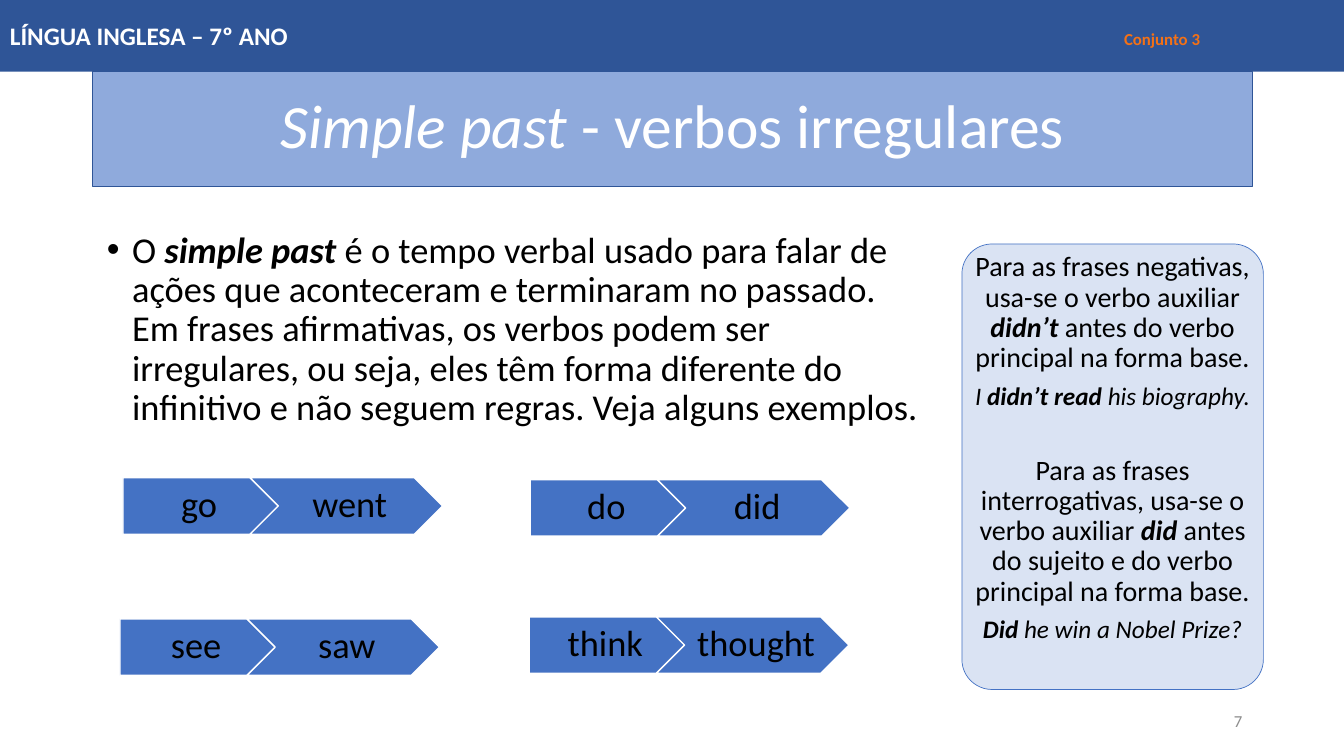
"""Build the slide on irregular verbs in the simple past."""
from lxml import etree
from pptx import Presentation
from pptx.dml.color import RGBColor
from pptx.enum.shapes import MSO_SHAPE
from pptx.enum.text import MSO_ANCHOR, MSO_AUTO_SIZE, PP_ALIGN
from pptx.oxml.ns import qn
from pptx.util import Inches, Pt

LEFT, CENTER, RIGHT = PP_ALIGN.LEFT, PP_ALIGN.CENTER, PP_ALIGN.RIGHT
TOP, MIDDLE = MSO_ANCHOR.TOP, MSO_ANCHOR.MIDDLE
RECTANGLE, ROUNDED = MSO_SHAPE.RECTANGLE, MSO_SHAPE.ROUNDED_RECTANGLE
PENTAGON, CHEVRON = MSO_SHAPE.PENTAGON, MSO_SHAPE.CHEVRON

FONT = "Calibri"
BLACK = RGBColor(0x00, 0x00, 0x00)
WHITE = RGBColor(0xFF, 0xFF, 0xFF)
GRAY = RGBColor(0x8C, 0x8C, 0x8C)
NAVY = RGBColor(0x2F, 0x55, 0x97)
BLUE = RGBColor(0x44, 0x72, 0xC4)
SKY = RGBColor(0x8F, 0xAA, 0xDC)
PALE = RGBColor(0xDA, 0xE3, 0xF3)
ORANGE = RGBColor(0xF4, 0x71, 0x16)

SUBJECT = "LÍNGUA INGLESA – 7º ANO"
UNIT = "Conjunto 3"
UNIT_TAB = 11.05
PAGE_NUMBER = "7"
TITLE = [("Simple past ", "i"), ("- verbos irregulares", "")]
BODY = [
    ("O ", ""),
    ("simple past", "bi"),
    (" é o tempo verbal usado para falar de ações que aconteceram e terminaram "
     "no passado. Em frases afirmativas, os verbos podem ser irregulares, ou seja, "
     "eles têm forma diferente do infinitivo e não seguem regras. "
     "Veja alguns exemplos.", ""),
]
RULES = [
    (20, 0, [("Para as frases negativas, usa-se o verbo auxiliar ", ""),
             ("didn’t", "bi"),
             (" antes do verbo principal na forma base.", "")]),
    (18, 0, [("I ", "i"), ("didn’t read ", "bi"), ("his biography.", "i")]),
    (20, 26, [("Para as frases interrogativas, usa-se o verbo auxiliar ", ""),
              ("did", "bi"),
              (" antes do sujeito e do verbo principal na forma base.", "")]),
    (18, 0, [("Did ", "bi"), ("he win a Nobel Prize?", "i")]),
]
VERBS = [
    ("go", "went", 1.22, 4.74),
    ("do", "did", 5.26, 4.76),
    ("see", "saw", 1.19, 6.14),
    ("think", "thought", 5.25, 6.12),
]
ARROW_HEIGHT = 0.56
BASE_WIDTH, PAST_WIDTH, PAST_OFFSET = 1.54, 1.91, 1.26


def place(box, left, top, width, height):
    """Move and size a box, in inches."""
    box.left, box.top = Inches(left), Inches(top)
    box.width, box.height = Inches(width), Inches(height)


def paint(box, fill, line=None, weight=1):
    """Fill and outline a box."""
    box.fill.solid()
    box.fill.fore_color.rgb = fill
    if line is None:
        box.line.fill.background()
    else:
        box.line.color.rgb = line
        box.line.width = Pt(weight)


def add_box(page, kind, at, fill, line=None, weight=1):
    """Add a painted preset shape without a shadow."""
    box = page.shapes.add_shape(kind, *map(Inches, at))
    box.shadow.inherit = False
    paint(box, fill, line, weight)
    return box


def set_frame(box, anchor=MIDDLE, insets=(0.1, 0.05, 0.1, 0.05)):
    """Set wrapping, anchor and insets, and return the text frame."""
    frame = box.text_frame
    frame.word_wrap = True
    frame.auto_size = MSO_AUTO_SIZE.NONE
    frame.vertical_anchor = anchor
    (frame.margin_left, frame.margin_top,
     frame.margin_right, frame.margin_bottom) = map(Inches, insets)
    return frame


def write(para, spans, size=18, color=BLACK, align=CENTER, spacing=0.9,
          before=0, after=0):
    """Write (text, style) spans into a paragraph with one format."""
    para.alignment = align
    para.line_spacing = spacing
    para.space_before, para.space_after = Pt(before), Pt(after)
    for text, style in spans:
        span = para.add_run()
        span.text = text
        span.font.name = FONT
        span.font.size = Pt(size)
        span.font.color.rgb = color
        span.font.bold = "b" in style
        span.font.italic = "i" in style
    return para


def add_bullet(para, indent):
    """Give a paragraph a round bullet with a hanging indent."""
    properties = para._p.get_or_add_pPr()
    properties.set("marL", str(Inches(indent)))
    properties.set("indent", str(-Inches(indent)))
    etree.SubElement(properties, qn("a:buFont"), typeface="Arial")
    etree.SubElement(properties, qn("a:buChar"), char="•")


def add_tab_stop(para, position):
    """Add a left tab stop, in inches from the text edge."""
    stops = etree.SubElement(para._p.get_or_add_pPr(), qn("a:tabLst"))
    etree.SubElement(stops, qn("a:tab"), pos=str(Inches(position)), algn="l")


def add_header(page):
    """Add the band with the subject and the unit."""
    band = add_box(page, RECTANGLE, (0, 0, 13.33, 0.71), NAVY)
    para = set_frame(band).paragraphs[0]
    write(para, [(SUBJECT + "\t", "b")], color=WHITE, align=LEFT, spacing=1.0)
    write(para, [(UNIT, "b")], size=12, color=ORANGE, align=LEFT, spacing=1.0)
    add_tab_stop(para, UNIT_TAB)


def add_rules(page):
    """Add the panel with the negative and interrogative rules."""
    panel = add_box(page, ROUNDED, (9.54, 2.42, 2.99, 4.42), PALE, BLUE, 0.5)
    panel.adjustments[0] = 0.1
    frame = set_frame(panel, TOP, (0, 0, 0, 0))
    for index, (size, before, spans) in enumerate(RULES):
        para = frame.add_paragraph() if index else frame.paragraphs[0]
        write(para, spans, size=size, before=before, after=0.35 * size)


def add_verb(page, base, past, left, top):
    """Add the pair of arrows for one verb."""
    arrows = [
        (PENTAGON, base, left, BASE_WIDTH, 0.15),
        (CHEVRON, past, left + PAST_OFFSET, PAST_WIDTH, 0.11),
    ]
    for kind, word, start, width, inset in arrows:
        arrow = add_box(page, kind, (start, top, width, ARROW_HEIGHT), BLUE, WHITE)
        frame = set_frame(arrow, insets=(inset, 0.08, 0.04, 0.08))
        write(frame.paragraphs[0], [(word, "")], size=26)


def main():
    """Build and save the deck."""
    deck = Presentation()
    deck.slide_width, deck.slide_height = Inches(13.33), Inches(7.5)
    page = deck.slides.add_slide(deck.slide_layouts[1])

    title = page.shapes.title
    place(title, 0.92, 0.71, 11.5, 1.14)
    paint(title, SKY, NAVY)
    write(set_frame(title).paragraphs[0], TITLE, size=44, color=WHITE)

    body = page.placeholders[1]
    place(body, 0.96, 2.25, 8.29, 2.24)
    para = set_frame(body, TOP).paragraphs[0]
    write(para, BODY, size=26, align=LEFT, before=10)
    add_bullet(para, 0.25)

    number = page.shapes.add_textbox(*map(Inches, (9.42, 6.95, 3, 0.4)))
    write(set_frame(number).paragraphs[0], [(PAGE_NUMBER, "")], size=12,
          color=GRAY, align=RIGHT, spacing=1.0)

    add_header(page)
    add_rules(page)
    for verb in VERBS:
        add_verb(page, *verb)
    deck.save("out.pptx")


if __name__ == "__main__":
    main()
